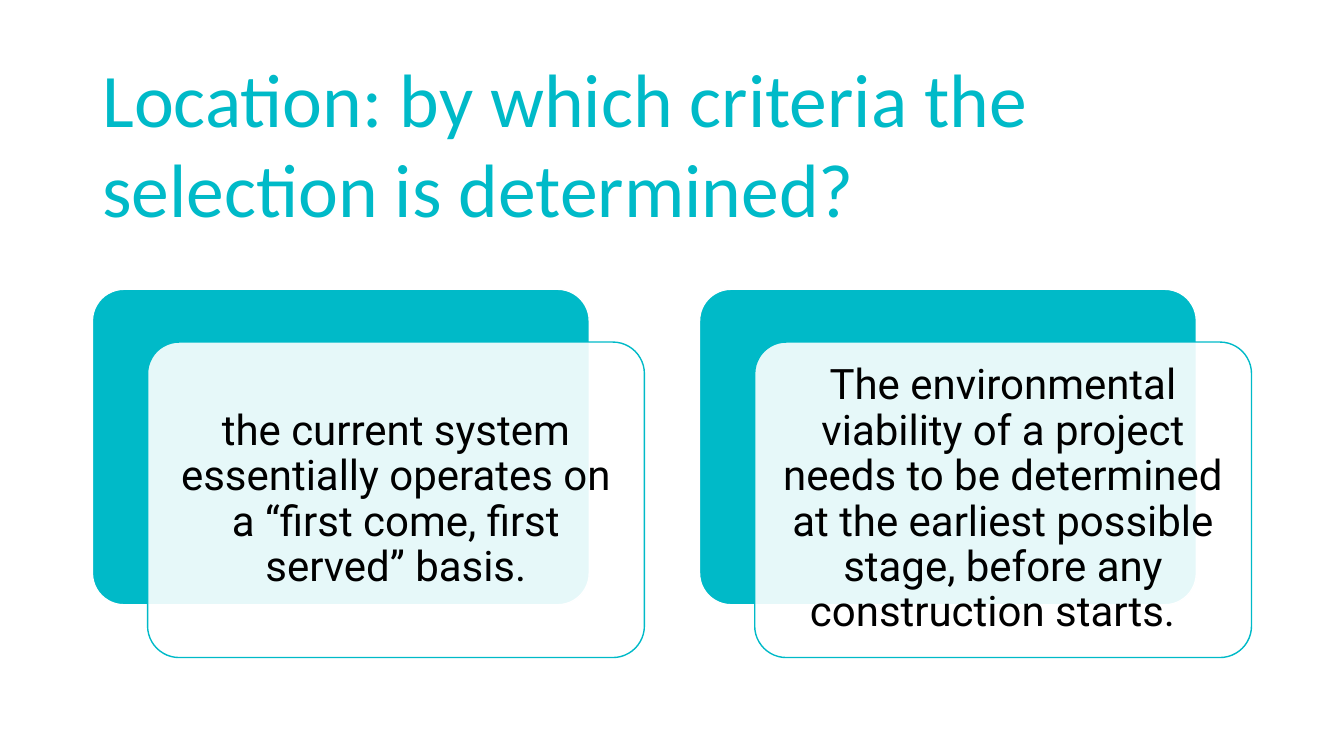
from dataclasses import dataclass

from pptx import Presentation
from pptx.dml.color import RGBColor
from pptx.enum.shapes import MSO_SHAPE
from pptx.enum.text import MSO_ANCHOR, PP_ALIGN
from pptx.oxml.ns import qn
from pptx.util import Cm, Pt
from lxml import etree

ROUNDED = MSO_SHAPE.ROUNDED_RECTANGLE
MIDDLE, BOTTOM = MSO_ANCHOR.MIDDLE, MSO_ANCHOR.BOTTOM
LEFT, CENTER = PP_ALIGN.LEFT, PP_ALIGN.CENTER

COLORS = {"teal": "00BAC8", "white": "FFFFFF", "black": "000000"}

CARD_LEFT, CARD_TOP = 2.33, 7.29
CARD_WIDTH, CARD_HEIGHT = 12.52, 7.95
CARD_PITCH = 15.3
FRONT_DX, FRONT_DY = 1.39, 1.33
CARD_INSET = 0.3


@dataclass
class TextStyle:
    font: str
    size: int
    color: str
    align: PP_ALIGN
    anchor: MSO_ANCHOR
    spacing: float


@dataclass
class Panel:
    fill: str
    line: str
    opacity: int


TITLE = TextStyle("Calibri", 54, "teal", LEFT, BOTTOM, 1.0)
CARD_TEXT = TextStyle("Roboto", 30, "black", CENTER, MIDDLE, 0.9)
BACK = Panel("teal", "white", 100)
FRONT = Panel("white", "teal", 90)
CARDS = [
    "the current system essentially operates on a “first come, first served” basis.",
    "The environmental viability of a project needs to be determined at the earliest "
    "possible stage, before any construction starts.  ",
]


def rgb(name: str) -> RGBColor:
    return RGBColor.from_string(COLORS[name])


def write(s, text: str, style: TextStyle) -> None:
    tf = s.text_frame
    tf.word_wrap = True
    tf.vertical_anchor = style.anchor
    p = tf.paragraphs[0]
    p.alignment = style.align
    p.line_spacing = style.spacing
    r = p.add_run()
    r.text = text
    for name, value in {"name": style.font, "size": Pt(style.size)}.items():
        setattr(r.font, name, value)
    r.font.color.rgb = rgb(style.color)


def add_panel(slide, left: float, top: float, panel: Panel):
    s = slide.shapes.add_shape(ROUNDED, Cm(left), Cm(top), Cm(CARD_WIDTH), Cm(CARD_HEIGHT))
    s.shadow.inherit = False
    s.adjustments[0] = 0.1
    s.fill.solid()
    s.fill.fore_color.rgb = rgb(panel.fill)
    s.line.color.rgb = rgb(panel.line)
    s.line.width = Pt(1)
    if panel.opacity < 100:
        color = s.fill._xPr.find(qn("a:solidFill"))[0]
        etree.SubElement(color, qn("a:alpha"), val=str(panel.opacity * 1000))
    return s


def add_card(slide, left: float, text: str) -> None:
    add_panel(slide, left, CARD_TOP, BACK)
    s = add_panel(slide, left + FRONT_DX, CARD_TOP + FRONT_DY, FRONT)
    for side in ("left", "top", "right", "bottom"):
        setattr(s.text_frame, f"margin_{side}", Cm(CARD_INSET))
    write(s, text, CARD_TEXT)


def main() -> None:
    prs = Presentation()
    prs.slide_width, prs.slide_height = Cm(33.87), Cm(19.05)
    slide = prs.slides.add_slide(prs.slide_layouts[6])
    title = slide.shapes.add_textbox(Cm(2.33), Cm(1.02), Cm(29.21), Cm(4.98))
    write(title, "Location: by which criteria the selection is determined?", TITLE)
    for i, text in enumerate(CARDS):
        add_card(slide, CARD_LEFT + i * CARD_PITCH, text)
    prs.save("out.pptx")


if __name__ == "__main__":
    main()
